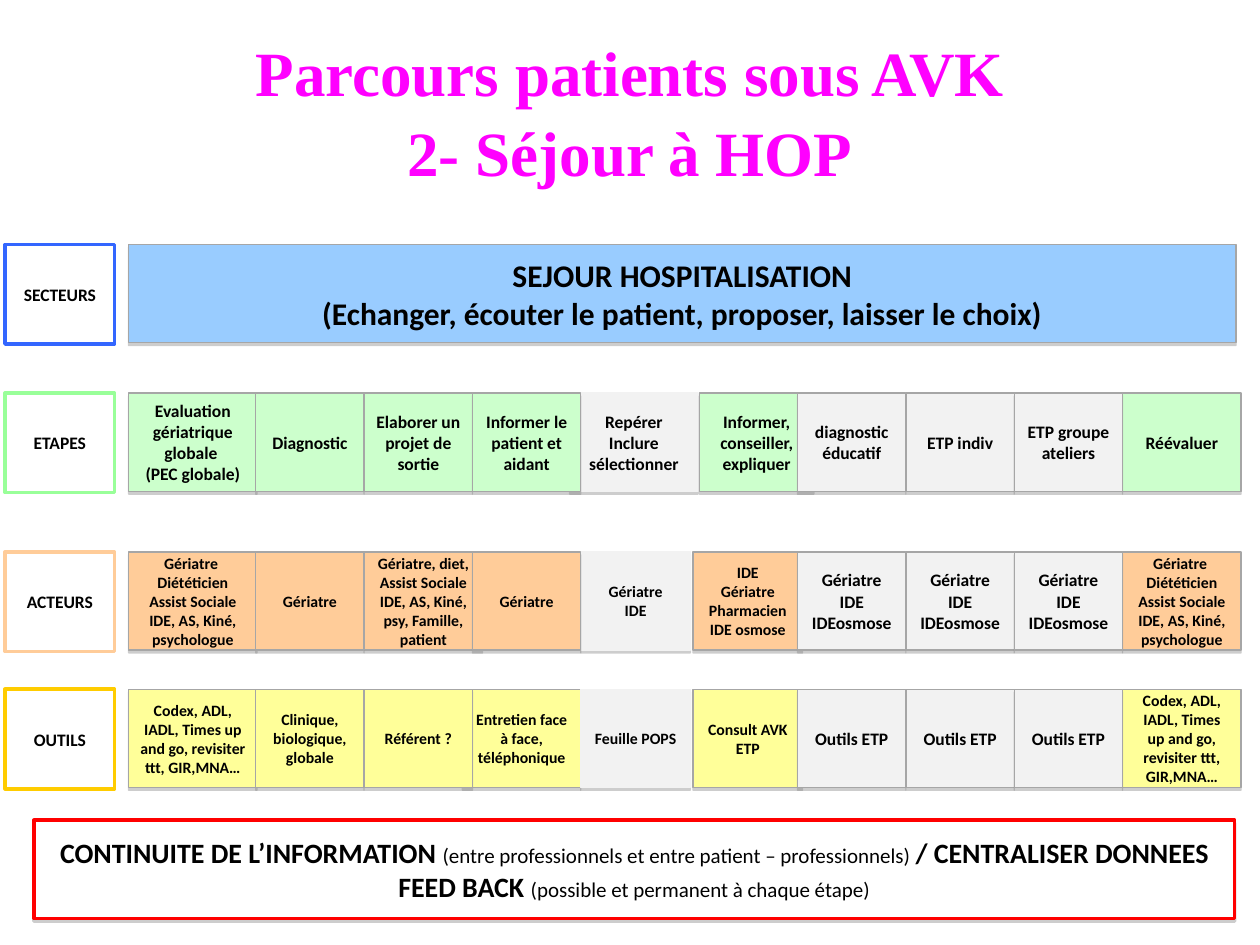
from lxml import etree
from pptx import Presentation
from pptx import util as u
from pptx.dml.color import RGBColor
from pptx.enum import shapes, text
from pptx.oxml.ns import qn

BLACK, WHITE, GREY = "000000", "FFFFFF", "F2F2F2"
BORDER = "A6A6A6"
CELL_H, LABEL_H = 0.78, 0.79
FIRST_X, STEP = 1.02, 0.86
# Column left edges: the care steps before and after the two middle columns
COLUMNS = ([FIRST_X] + [2.03 + STEP * i for i in range(3)] + [4.61, 5.5]
           + [6.33 + STEP * i for i in range(4)])
WIDTHS = [1.02, STEP, STEP, STEP, 0.87, 0.87, STEP, STEP, STEP, 0.94]
GREY_COLUMNS = {4, 6, 7, 8}
BORDERLESS = 4

TEAM = "Gériatre \nDiététicien\nAssist Sociale IDE, AS, Kiné, psychologue"
ETP_TEAM = "Gériatre\nIDE\nIDEosmose"
TESTS = "Codex, ADL, IADL, Times up and go, revisiter ttt, GIR,MNA…"

# label, top, label border, cell fill, sizes, texts, {column: (left, width)}
ROWS = [
    ("ETAPES", 3.12, "99FF99", "CCFFCC", [10] * 10,
     ["Evaluation gériatrique globale \n(PEC globale)", "Diagnostic",
      "Elaborer un projet de sortie", "Informer le patient et aidant",
      "Repérer Inclure\nsélectionner", "Informer, conseiller, expliquer",
      "diagnostic éducatif", "ETP indiv", "ETP groupe ateliers", "Réévaluer"],
     {4: (4.52, 1.02), 5: (5.55, 0.91)}),
    ("ACTEURS", 4.38, "FFCC99", "FFCC99", [9] * 6 + [10] * 3 + [9],
     [TEAM, "Gériatre",
      "Gériatre, diet, Assist Sociale IDE, AS, Kiné, psy, Famille, patient",
      "Gériatre", "Gériatre\nIDE", "IDE\nGériatre\nPharmacien\nIDE osmose",
      ETP_TEAM, ETP_TEAM, ETP_TEAM, TEAM],
     {2: (2.89, 0.94)}),
    ("OUTILS", 5.47, "FFCC00", "FFFF99", [9] * 6 + [10] * 3 + [9],
     [TESTS, "Clinique, biologique, globale", "Référent ?",
      "Entretien face à face, téléphonique", "Feuille POPS",
      "Consult AVK\nETP", "Outils ETP", "Outils ETP", "Outils ETP", TESTS],
     {3: (3.67, 0.94)}),
]


def rgb(value):
    return RGBColor.from_string(value)


def set_font(font, size, color=BLACK, bold=True, name="Calibri"):
    font.size, font.bold, font.name = u.Pt(size), bold, name
    font.color.rgb = rgb(color)


def add_shadow(sp):
    effects = sp._element.spPr.find(qn("a:effectLst"))
    shadow = etree.SubElement(effects, qn("a:outerShdw"), dist="20320",
                              dir="5400000", rotWithShape="0")
    color = etree.SubElement(shadow, qn("a:srgbClr"), val="808080")
    etree.SubElement(color, qn("a:alpha"), val="38000")


def add_box(s, x, y, w, h, fill, line, weight=0.75, shadow=True):
    sp = s.shapes.add_shape(shapes.MSO_SHAPE.RECTANGLE, u.Inches(x),
                            u.Inches(y), u.Inches(w), u.Inches(h))
    sp.fill.solid()
    sp.fill.fore_color.rgb = rgb(fill)
    sp.line.color.rgb = rgb(line)
    sp.line.width = u.Pt(weight)
    sp.shadow.inherit = False
    if shadow:
        add_shadow(sp)
    tf = sp.text_frame
    tf.word_wrap = True
    tf.vertical_anchor = text.MSO_ANCHOR.MIDDLE
    tf.margin_left = tf.margin_right = u.Inches(0.09)
    return tf


def write(tf, content, size):
    tf.text = content
    for p in tf.paragraphs:
        p.alignment = text.PP_ALIGN.CENTER
        set_font(p.font, size)


def add_title(s):
    sp = s.shapes.title
    sp.left, sp.top = u.Inches(0.5), u.Inches(0.3)
    sp.width, sp.height = u.Inches(9), u.Inches(1.25)
    tf = sp.text_frame
    tf.text = "Parcours patients sous AVK\v2- Séjour à HOP"
    tf.auto_size = text.MSO_AUTO_SIZE.NONE
    tf.vertical_anchor = text.MSO_ANCHOR.BOTTOM
    p = tf.paragraphs[0]
    p.alignment = text.PP_ALIGN.CENTER
    p.line_spacing = 1.05
    set_font(p.font, 36, "FF00FF", name="Times New Roman")


def add_label(s, caption, y, color):
    tf = add_box(s, 0.04, y, 0.87, LABEL_H, WHITE, color, 2, shadow=False)
    write(tf, caption, 10)


def add_row(s, caption, y, label_color, fill, sizes, texts, moved):
    add_label(s, caption, y, label_color)
    places = [moved.get(i, place)
              for i, place in enumerate(zip(COLUMNS, WIDTHS))]
    # Wide cells go first, so that their neighbours cover the overlap
    for i in sorted(range(len(places)), key=lambda i: -places[i][1]):
        x, w = places[i]
        tf = add_box(s, x, y, w, CELL_H, GREY if i in GREY_COLUMNS else fill,
                     GREY if i == BORDERLESS else BORDER)
        write(tf, texts[i], sizes[i])


def add_footer(s):
    tf = add_box(s, 0.27, 6.51, 9.53, CELL_H, WHITE, "FF0000", 2)
    lines = [
        [("CONTINUITE DE L’INFORMATION ", True),
         ("(entre professionnels et entre patient – professionnels) ", False),
         ("/ CENTRALISER DONNEES", True)],
        [("FEED BACK ", True),
         ("(possible et permanent à chaque étape)", False)],
    ]
    for i, runs in enumerate(lines):
        p = tf.add_paragraph() if i else tf.paragraphs[0]
        p.alignment = text.PP_ALIGN.CENTER
        for content, strong in runs:
            r = p.add_run()
            r.text = content
            set_font(r.font, 16 if strong else 12, bold=strong)


def main():
    prs = Presentation()
    prs.slide_width, prs.slide_height = u.Inches(10), u.Inches(7.5)
    s = prs.slides.add_slide(prs.slide_layouts[5])
    add_title(s)

    # Sector banner
    add_label(s, "SECTEURS", 1.94, "3366FF")
    banner = add_box(s, FIRST_X, 1.94, 8.79, CELL_H, "99CCFF", BORDER)
    write(banner, "SEJOUR HOSPITALISATION\n"
          "(Echanger, écouter le patient, proposer, laisser le choix)", 18)

    # Steps, people and tools
    for row in ROWS:
        add_row(s, *row)

    add_footer(s)
    prs.save("out.pptx")


if __name__ == "__main__":
    main()
